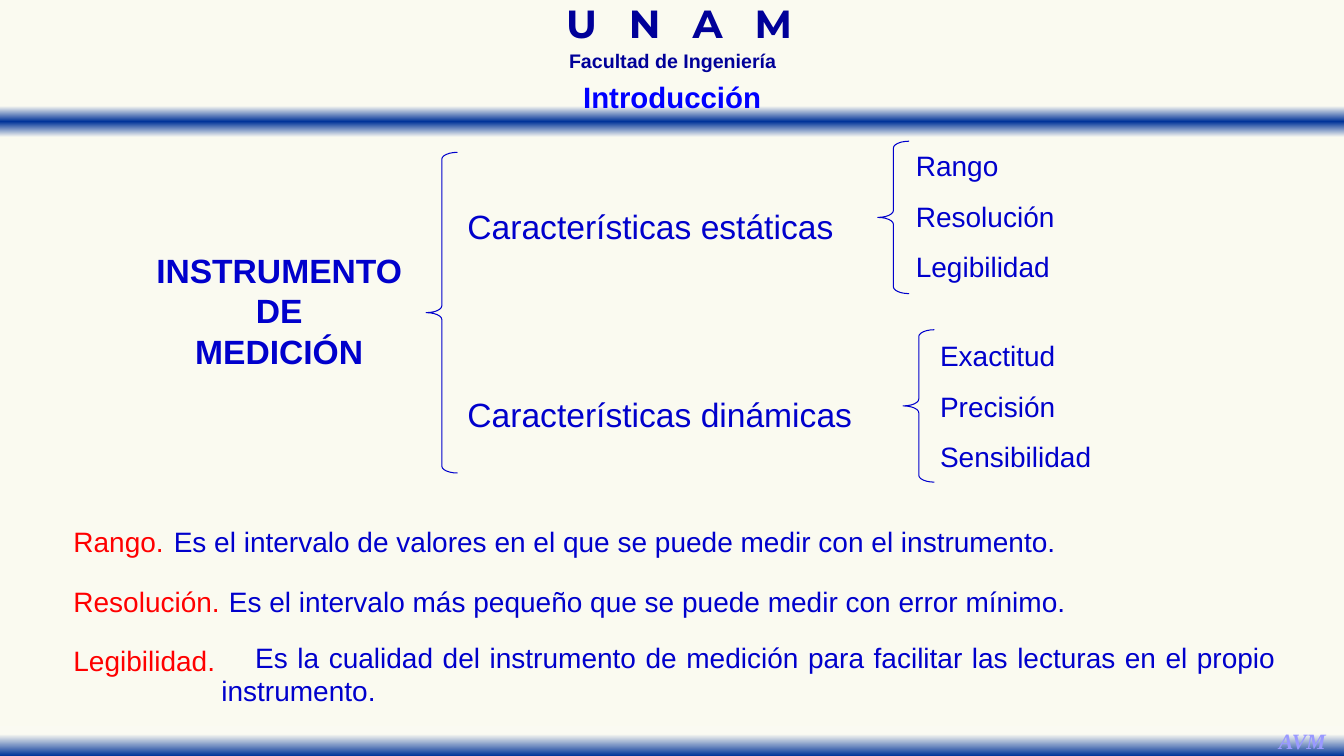
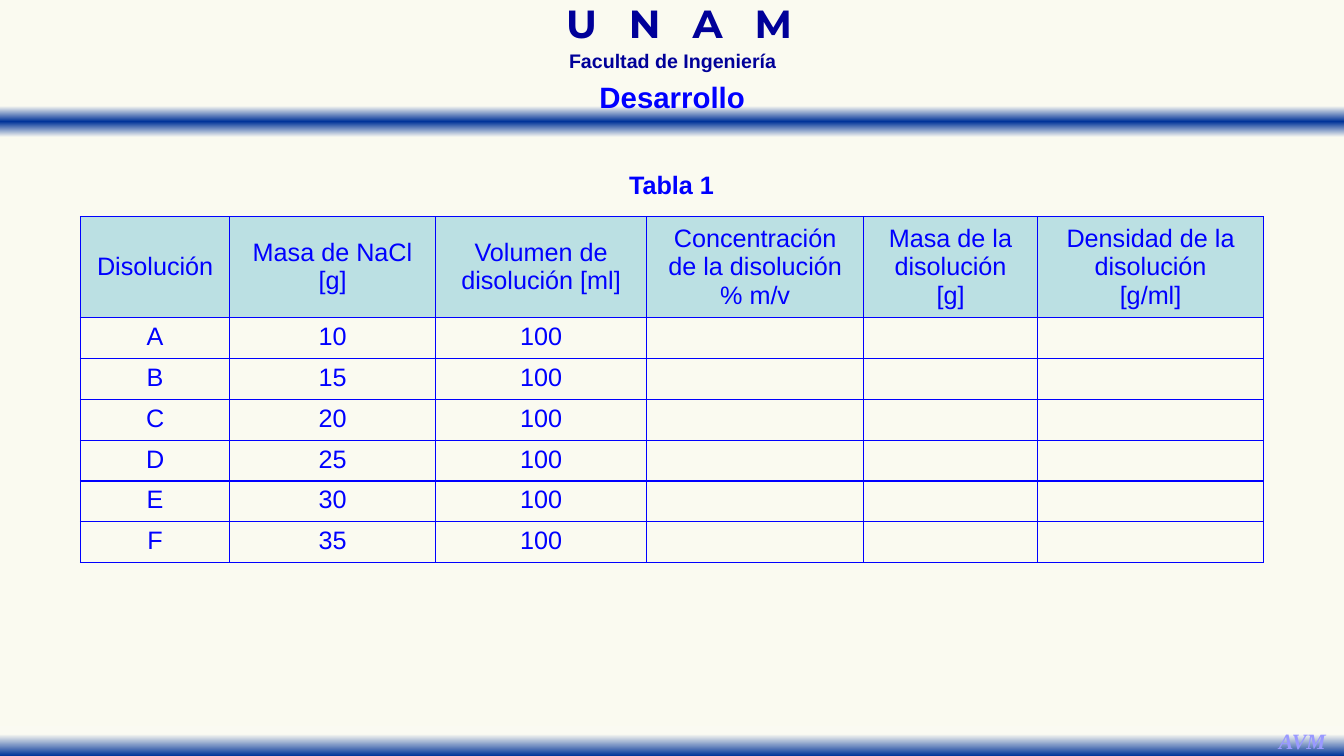
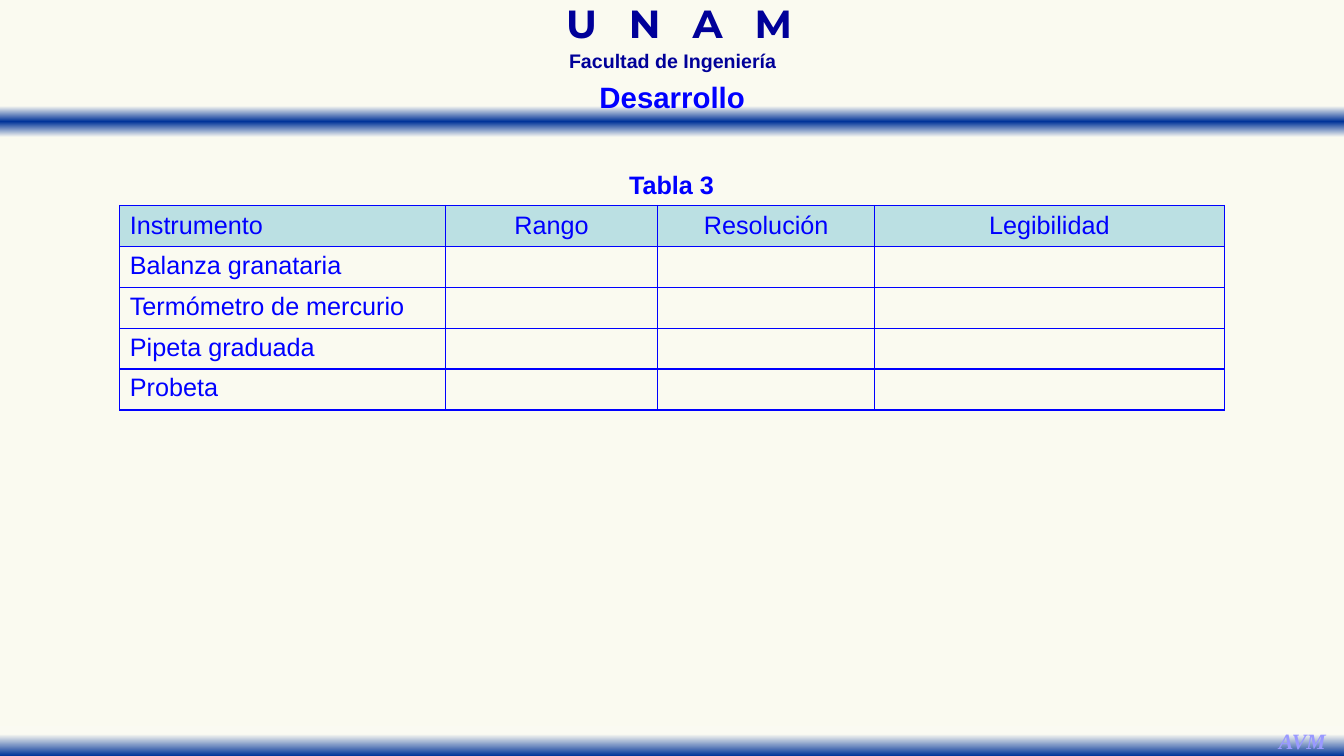
from pptx import Presentation, util as u
from pptx.dml.color import RGBColor
from pptx.enum import shapes, text
from pptx.oxml import parse_xml
from pptx.oxml.ns import nsdecls, qn

Cm, Pt = u.Cm, u.Pt
LEFT, CENTER, JUSTIFY = text.PP_ALIGN.LEFT, text.PP_ALIGN.CENTER, text.PP_ALIGN.JUSTIFY
COLORS = {
    "paper": "FAFAF0", "fade": "FAFAF2", "band": "003399", "school": "000099",
    "author": "9999FF", "title": "0000FF", "body": "0000CC", "term": "FF0000",
    "header": "BBE0E3",
}
SLIDE_W, SLIDE_H = 33.87, 19.05


def rgb(name):
    return RGBColor.from_string(COLORS[name])


def add_text(slide, box, content, size, color, align=LEFT, bold=False,
             font="Arial", spacing=1.0, after=0):
    """Add a text box, one paragraph per line, and return its paragraphs."""
    frame = slide.shapes.add_textbox(*map(Cm, box)).text_frame
    frame.word_wrap = True
    frame.text = content
    for paragraph in frame.paragraphs:
        paragraph.alignment = align
        paragraph.line_spacing = spacing
        paragraph.space_after = Pt(after)
        paragraph.font.name, paragraph.font.size = font, Pt(size)
        paragraph.font.bold = bold
        paragraph.font.color.rgb = rgb(color)
    return frame.paragraphs


prs = Presentation()
prs.slide_width, prs.slide_height = Cm(SLIDE_W), Cm(SLIDE_H)
background = prs.slide_master.background.fill
background.solid()
background.fore_color.rgb = rgb("paper")

# Bands: top, height and gradient stops in percent
bands = [
    (2.67, 0.79, [(0, "fade"), (50, "band"), (100, "fade")]),
    (18.29, 0.76, [(28, "fade"), (100, "band")]),
]

# Parts that every slide shares
slides = []
for title in ["Introducción", "Desarrollo", "Desarrollo"]:
    slide = prs.slides.add_slide(prs.slide_layouts[6])
    slides.append(slide)
    for top, height, stops in bands:
        band = slide.shapes.add_shape(shapes.MSO_SHAPE.RECTANGLE, 0, Cm(top),
                                      Cm(SLIDE_W), Cm(height))
        band.shadow.inherit = False
        band.line.fill.background()
        band.fill.gradient()
        band.fill.gradient_angle = 270
        stop_list = band.fill._fill._gradFill.find(qn("a:gsLst"))
        for stop in list(stop_list):
            stop_list.remove(stop)
        for percent, color in stops:
            stop_list.append(parse_xml(
                f'<a:gs {nsdecls("a")} pos="{percent * 1000}">'
                f'<a:srgbClr val="{COLORS[color]}"/></a:gs>'))

    school = add_text(slide, (12.15, 0.18, 9.93, 1.14), "U N A M", 28, "school",
                      CENTER, True, "Montserrat", 0.7)[0]
    school.runs[0].font._element.set("spc", "750")  # letter spacing, 7.5 pt
    add_text(slide, (12.42, 1.27, 9.07, 0.69), "Facultad de Ingeniería", 14,
             "school", CENTER, True, spacing=0.7)
    author = add_text(slide, (31.8, 18.21, 2.04, 0.84), "AVM", 15.6, "author",
                      CENTER, True, "Times New Roman")[0]
    author.font.italic = True
    add_text(slide, (11.94, 1.87, 10, 1.14), title, 21, "title", CENTER, True)

introduction, solutions, instruments = slides

# Introduction: tree of characteristics
add_text(introduction, (3.58, 6.17, 6.91, 3.33), "INSTRUMENTO\nDE\nMEDICIÓN",
         24, "body", CENTER, True)
for left, top, height in [(10.74, 3.84, 8.08), (22.12, 3.56, 3.84), (22.76, 8.31, 3.84)]:
    brace = introduction.shapes.add_shape(shapes.MSO_SHAPE.LEFT_BRACE, Cm(left),
                                          Cm(top), Cm(0.79), Cm(height))
    brace.shadow.inherit = False
    brace.adjustments[0] = 0.22
    brace.fill.background()
    brace.line.color.rgb = rgb("body")
    brace.line.width = Pt(0.75)

branches = [
    ("Características estáticas", 4.75, "Rango\nResolución\nLegibilidad", 22.83, 3.63),
    ("Características dinámicas", 9.5, "Exactitud\nPrecisión\nSensibilidad", 23.44, 8.41),
]
for branch, branch_top, traits, traits_left, traits_top in branches:
    add_text(introduction, (11.53, branch_top, 11.15, 1.45), branch, 24, "body",
             spacing=1.3)
    add_text(introduction, (traits_left, traits_top, 5.31, 3.68), traits, 20,
             "body", after=12)

# Introduction: definitions, with top shift, line spacing, margin and first indent
definitions = [
    ("Rango.", "Es el intervalo de valores en el que se puede medir con el instrumento.",
     0, 1.3, 0, 2.53),
    ("Resolución.", "Es el intervalo más pequeño que se puede medir con error mínimo.",
     0, 1.3, 0, 3.92),
    ("Legibilidad.", "Es la cualidad del instrumento de medición para facilitar "
     "las lecturas en el propio instrumento.", 0.18, 1.0, 3.73, 0.85),
]
for row, (term, meaning, shift, spacing, margin, indent) in enumerate(definitions):
    top = 12.85 + 1.49 * row
    add_text(introduction, (1.6, top, 5, 1.24), term, 20, "term", spacing=1.3)
    definition = add_text(introduction, (1.6, top + shift, 30.81, 1.24), meaning,
                          20, "body", JUSTIFY, spacing=spacing)[0]
    properties = definition._p.get_or_add_pPr()
    properties.set("marL", str(Cm(margin)))
    properties.set("indent", str(Cm(indent)))

# Development: tables to fill in
solution_rows = [["Disolución", "Masa de NaCl\n[g]", "Volumen de disolución [ml]",
                  "Concentración de la disolución\n% m/v",
                  "Masa de la disolución\n[g]", "Densidad de la disolución\n[g/ml]"]]
solution_rows += [[name, str(10 + 5 * i), "100"] for i, name in enumerate("ABCDEF")]
instrument_rows = [["Instrumento", "Rango", "Resolución", "Legibilidad"],
                   ["Balanza granataria"], ["Termómetro de mercurio"],
                   ["Pipeta graduada"], ["Probeta"]]
ROW_H = 1.03
tables = [
    (solutions, "Tabla 1", 2.03, 5.46, [3.76, 5.18, 5.33, 5.46, 4.39, 5.69], 2.54,
     CENTER, solution_rows),
    (instruments, "Tabla 3", 3.02, 5.18, [8.2, 5.36, 5.46, 8.81], ROW_H,
     LEFT, instrument_rows),
]
for slide, caption, left, top, widths, header_h, first_align, rows in tables:
    add_text(slide, (1.47, 3.76, 30.91, 1.35), caption, 18, "title", CENTER, True,
             spacing=1.5)
    heights = [header_h] + [ROW_H] * (len(rows) - 1)
    table = slide.shapes.add_table(len(rows), len(widths), Cm(left), Cm(top),
                                   Cm(sum(widths)), Cm(sum(heights))).table
    table.horz_banding = False
    for column, width in zip(table.columns, widths):
        column.width = Cm(width)
    for r, (values, height) in enumerate(zip(rows, heights)):
        table.rows[r].height = Cm(height)
        for c in range(len(widths)):
            cell = table.cell(r, c)
            for side in "LRTB":
                cell._tc.get_or_add_tcPr().append(parse_xml(
                    f'<a:ln{side} {nsdecls("a")} w="12700"><a:solidFill>'
                    f'<a:srgbClr val="{COLORS["title"]}"/></a:solidFill></a:ln{side}>'))
            if r == 0:
                cell.fill.solid()
                cell.fill.fore_color.rgb = rgb("header")
                cell.vertical_anchor = text.MSO_ANCHOR.MIDDLE
            else:
                cell.fill.background()
            if c >= len(values):
                continue
            cell.text = values[c]
            for paragraph in cell.text_frame.paragraphs:
                paragraph.alignment = first_align if c == 0 else CENTER
                paragraph.font.name, paragraph.font.size = "Arial", Pt(18)
                paragraph.font.bold = False
                paragraph.font.color.rgb = rgb("title")

prs.save("out.pptx")
